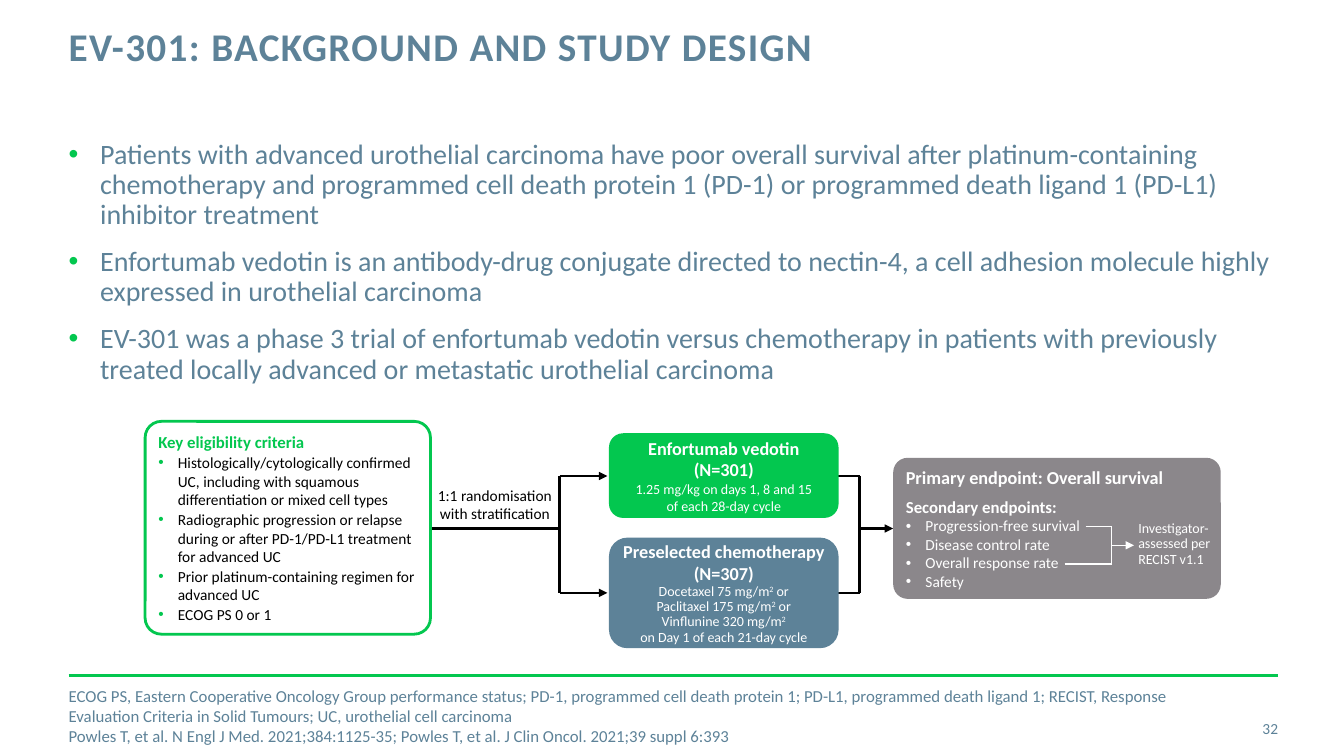
import pptx
import pptx.dml.color
import pptx.enum.shapes
import pptx.enum.text
import pptx.oxml
import pptx.oxml.ns
import pptx.util
from lxml import etree

Pt = pptx.util.Pt
RGB = pptx.dml.color.RGBColor
ALIGN = pptx.enum.text.PP_ALIGN
ANCHOR = pptx.enum.text.MSO_ANCHOR
FIT = pptx.enum.text.MSO_AUTO_SIZE
qn = pptx.oxml.ns.qn

GREEN = RGB(0x03, 0xC7, 0x4F)
BLUE = RGB(0x5D, 0x82, 0x98)
GREY = RGB(0x8B, 0x87, 0x8B)
BLACK = RGB(0, 0, 0)
WHITE = RGB(255, 255, 255)


def child(parent, tag, **attrs):
    """Append a drawing element to its parent."""
    node = etree.SubElement(parent, qn(tag))
    for key, value in attrs.items():
        node.set(key, value)
    return node


def bullet(para, tint, indent):
    """Give a paragraph a coloured bullet and a hanging indent."""
    props = para._p.get_or_add_pPr()
    props.set("marL", str(Pt(indent)))
    props.set("indent", str(-Pt(indent)))
    child(child(props, "a:buClr"), "a:srgbClr", val=str(tint))
    child(props, "a:buFont", typeface="Arial")
    child(props, "a:buChar", char="•")


def write(frame, text, size, tint, bold=False, align=ALIGN.LEFT,
          lead=1.0, gap=0, mark=None, indent=14):
    """Add a paragraph, with \\v as line break and ^ around superscripts."""
    para = frame.paragraphs[0]
    if para.runs:
        para = frame.add_paragraph()
    else:
        gap = 0
    if mark is not None:
        bullet(para, mark, indent)
    para.alignment, para.line_spacing, para.space_before = align, lead, Pt(gap)
    font = para.font
    font.name, font.size, font.bold = "Calibri", Pt(size), bold
    font.color.rgb = tint
    for spot, piece in enumerate(text.split("^")):
        for row, line in enumerate(piece.split("\v")):
            if row:
                para.add_line_break()
            if line:
                run = para.add_run()
                run.text = line
                if spot % 2:
                    run._r.get_or_add_rPr().set("baseline", "30000")
    return para


def setup(frame, insets=(0, 0, 0, 0), anchor=ANCHOR.TOP, wrap=True):
    """Set the margins, anchor and wrapping of a text frame."""
    sides = [Pt(side) for side in insets]
    frame.margin_left, frame.margin_top = sides[:2]
    frame.margin_right, frame.margin_bottom = sides[2:]
    frame.vertical_anchor, frame.word_wrap = anchor, wrap
    frame.auto_size = FIT.NONE if wrap else FIT.SHAPE_TO_FIT_TEXT
    return frame


def place(shape, box):
    """Move a placeholder into a box."""
    shape.left, shape.top, shape.width, shape.height = map(Pt, box)
    return setup(shape.text_frame)


def label(shapes, box, **style):
    """Add a text box and return its frame."""
    return setup(shapes.add_textbox(*map(Pt, box)).text_frame, **style)


def card(shapes, box, curve, fill, edge=None, insets=(6, 0, 0, 0)):
    """Add a rounded box and return its frame."""
    shape = shapes.add_shape(
        pptx.enum.shapes.MSO_SHAPE.ROUNDED_RECTANGLE, *map(Pt, box))
    shape.adjustments[0] = curve
    shape.shadow.inherit = False
    shape.fill.solid()
    shape.fill.fore_color.rgb = fill
    if edge is None:
        shape.line.fill.background()
    else:
        shape.line.color.rgb, shape.line.width = edge, Pt(2)
    return setup(shape.text_frame, insets, ANCHOR.MIDDLE)


def link(shapes, ends, tint=BLACK, width=2, arrow=False):
    """Draw a straight line, with an arrowhead at its end if asked."""
    line = shapes.add_connector(
        pptx.enum.shapes.MSO_CONNECTOR.STRAIGHT, *map(Pt, ends))
    line.line.color.rgb, line.line.width = tint, Pt(width)
    if arrow:
        child(line.line._get_or_add_ln(), "a:tailEnd", type="triangle")
    child(line._element.spPr, "a:effectLst")


def heading(slide, box):
    """Fill the title."""
    frame = place(slide.shapes.title, box)
    para = write(frame, "EV-301: BACKGROUND AND STUDY DESIGN", 28, BLUE,
                 bold=True, lead=Pt(30))
    para.runs[0]._r.get_or_add_rPr().set("spc", "100")


def points(slide, box):
    """Fill the body with the background points."""
    frame = place(slide.placeholders[1], box)
    for text in (
        "Patients with advanced urothelial carcinoma have poor overall survival after platinum-containing chemotherapy and programmed cell death protein 1 (PD-1) or programmed death ligand 1 (PD-L1) inhibitor treatment",
        "Enfortumab vedotin is an antibody-drug conjugate directed to nectin-4, a cell adhesion molecule highly expressed in urothelial carcinoma",
        "EV-301 was a phase 3 trial of enfortumab vedotin versus chemotherapy in patients with previously treated locally advanced or metastatic urothelial carcinoma",
    ):
        write(frame, text, 20, BLUE, lead=0.9, gap=12, mark=GREEN, indent=22.5)


def footer(slide, box):
    """Draw the rule, the notes and the page number."""
    x, y, w, h = box
    link(slide.shapes, (x, y, x + w, y), GREEN)
    notes = label(slide.shapes, (x, y + 14.5, 824, 29), anchor=ANCHOR.MIDDLE)
    for text in (
        "ECOG PS, Eastern Cooperative Oncology Group performance status; PD-1, programmed cell death protein 1; PD-L1, programmed death ligand 1; RECIST, Response Evaluation Criteria in Solid Tumours; UC, urothelial cell carcinoma",
        "Powles T, et al. N Engl J Med. 2021;384:1125-35; Powles T, et al. J Clin Oncol. 2021;39 suppl 6:393",
    ):
        write(notes, text, 12, BLUE)
    page = label(slide.shapes, (x + w - 62, y + h - 34, 62, 29),
                 anchor=ANCHOR.MIDDLE)
    write(page, "32", 11, BLUE, align=ALIGN.RIGHT)


def entry(slide, box):
    """Draw the eligibility criteria."""
    frame = card(slide.shapes, box, 0.076, WHITE, GREEN)
    write(frame, "Key eligibility criteria", 12, GREEN, bold=True)
    for text in (
        "Histologically/cytologically confirmed UC, including with squamous differentiation or mixed cell types",
        "Radiographic progression or relapse during or after PD-1/PD-L1 treatment for advanced UC",
        "Prior platinum-containing regimen for advanced UC",
        "ECOG PS 0 or 1",
    ):
        write(frame, text, 11, BLACK, gap=1, mark=GREEN)


def flow(slide, box):
    """Draw the split into two arms and the join after them."""
    x, y, w, h = box
    shapes, mid = slide.shapes, y + 37.5
    fork, join = x + 96, x + w - 24
    link(shapes, (x, mid, fork, mid))
    link(shapes, (join, mid, x + w, mid), arrow=True)
    for side in (fork, join):
        link(shapes, (side, y, side, y + h))
    for row in (y, y + h):
        link(shapes, (fork, row, fork + 34, row), width=1.5, arrow=True)
        link(shapes, (join - 34, row, join, row), width=1.5)
    frame = label(shapes, (x + 1.5, mid - 34, 96.5, 34),
                  insets=(7.2, 3.6, 7.2, 3.6), wrap=False)
    write(frame, "1:1 randomisation\vwith stratification", 11, BLACK,
          align=ALIGN.CENTER)


def arms(slide, box):
    """Draw the two treatment arms."""
    x, y, w, h = box
    for top, tall, fill, lead, name, dose in (
        (0, 60.5, GREEN, 1.0, "Enfortumab vedotin\v(N=301)",
         "1.25 mg/kg on days 1, 8 and 15\vof each 28-day cycle"),
        (h - 79, 79, BLUE, 0.9, "Preselected chemotherapy\v(N=307)",
         "Docetaxel 75 mg/m^2^ or\vPaclitaxel 175 mg/m^2^ or\v"
         "Vinflunine 320 mg/m^2^\von Day 1 of each 21-day cycle"),
    ):
        frame = card(slide.shapes, (x, y + top, w, tall), 0.167, fill,
                     insets=(3, 3, 3, 3))
        write(frame, name, 13, WHITE, bold=True, align=ALIGN.CENTER)
        write(frame, dose, 10, WHITE, align=ALIGN.CENTER, lead=lead)


def goals(slide, box):
    """Draw the endpoints and the bracket with its note."""
    x, y = box[:2]
    shapes = slide.shapes.add_group_shape().shapes
    frame = card(shapes, box, 0.103, GREY)
    write(frame, "Primary endpoint: Overall survival", 13, WHITE, bold=True)
    write(frame, "Secondary endpoints:", 12, WHITE, bold=True, gap=6)
    for text in ("Progression-free survival", "Disease control rate",
                 "Overall response rate", "Safety"):
        write(frame, text, 11, WHITE, mark=WHITE)
    note = label(shapes, (x + 168, y + 42, 66, 40),
                 insets=(7.2, 3.6, 7.2, 3.6), wrap=False)
    write(note, "Investigator-\vassessed per\vRECIST v1.1", 10, WHITE, lead=0.9)
    side, high, low = x + 156, y + 49, y + 76
    mid = (high + low) / 2
    link(shapes, (x + 137.5, high, side, high), WHITE, 1)
    link(shapes, (x + 122.5, low, side, low), WHITE, 1)
    link(shapes, (side, high, side, low), WHITE, 1)
    link(shapes, (side, mid, side + 16, mid), WHITE, 1, True)


def main():
    """Build the slide and save it."""
    deck = pptx.Presentation()
    deck.slide_width, deck.slide_height = Pt(960), Pt(540)
    slide = deck.slides.add_slide(deck.slide_layouts[1])
    heading(slide, (49, 19.5, 688, 63))
    points(slide, (49, 100, 863, 356))
    footer(slide, (49, 482.5, 864, 57.5))
    flow(slide, (303.8, 340, 334.2, 83.5))
    entry(slide, (103.7, 301, 203.8, 152))
    arms(slide, (435, 309.5, 164, 153.5))
    goals(slide, (638, 327, 234, 100.8))
    deck.save("out.pptx")


if __name__ == "__main__":
    main()
